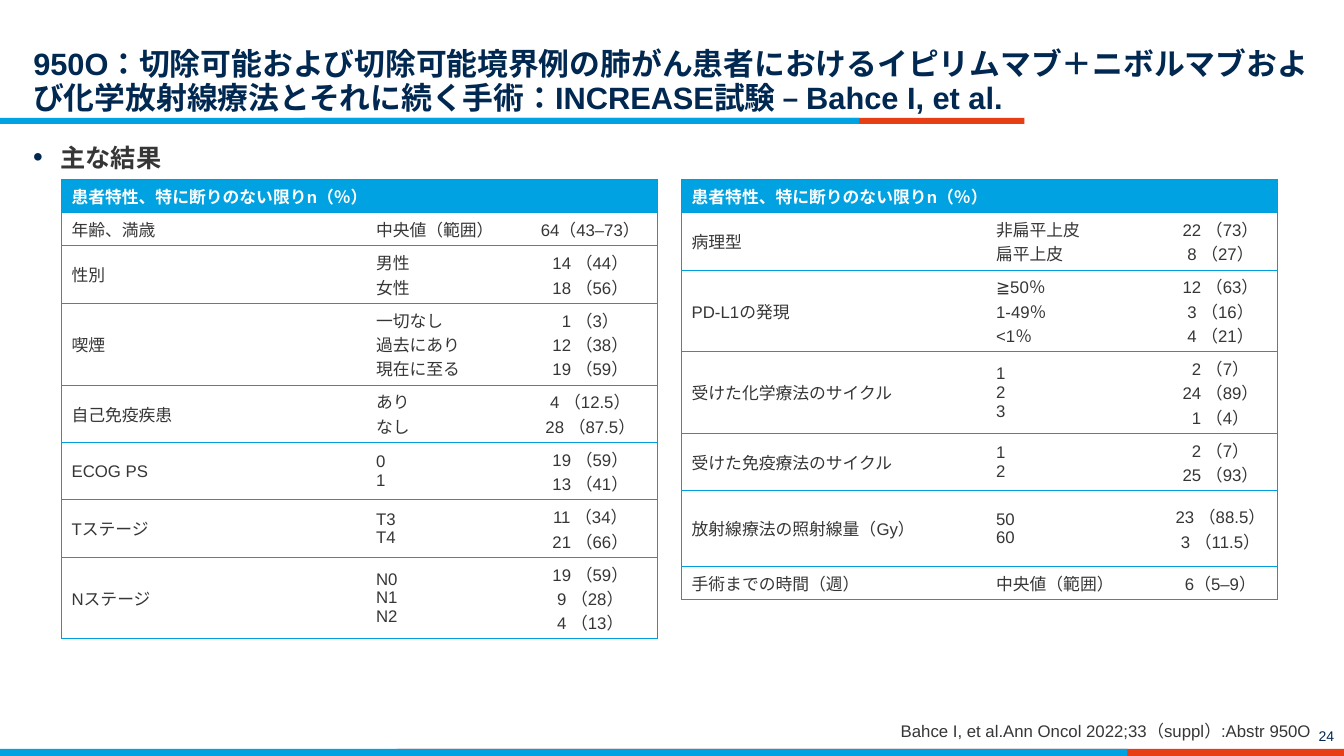
import lxml.etree
import pptx
import pptx.dml.color
import pptx.enum.lang
import pptx.enum.shapes
import pptx.enum.text
import pptx.oxml.ns
import pptx.util
from dataclasses import dataclass

Inches = pptx.util.Inches
Pt = pptx.util.Pt
qn = pptx.oxml.ns.qn
Align = pptx.enum.text.PP_ALIGN
Anchor = pptx.enum.text.MSO_ANCHOR

TITLE = "950O：切除可能および切除可能境界例の肺がん患者におけるイピリムマブ＋ニボルマブおよび化学放射線療法とそれに続く手術：INCREASE試験 – Bahce I, et al."
HEADING = "主な結果"
CITATION = "Bahce I, et al.Ann Oncol 2022;33（suppl）:Abstr 950O"
PAGE_NUMBER = "24"
TABLE_HEADER = "患者特性、特に断りのない限りn（％）"

TABLES = [
    {
        "left": 0.61,
        "columns": [3.02, 1.56, 1.33],
        "rows": [
            ("年齢、満歳", ["中央値（範囲）"], ["64（43–73）"]),
            ("性別", ["男性", "女性"], ["14 （44）", "18 （56）"]),
            ("喫煙", ["一切なし", "過去にあり", "現在に至る"], ["1 （3）", "12 （38）", "19 （59）"]),
            ("自己免疫疾患", ["あり", "なし"], ["4 （12.5）", "28 （87.5）"]),
            ("ECOG PS", ["0", "1"], ["19 （59）", "13 （41）"]),
            ("Tステージ", ["T3", "T4"], ["11 （34）", "21 （66）"]),
            ("Nステージ", ["N0", "N1", "N2"], ["19 （59）", "9 （28）", "4 （13）"]),
        ],
    },
    {
        "left": 6.76,
        "columns": [3.02, 1.76, 1.13],
        "rows": [
            ("病理型", ["非扁平上皮", "扁平上皮"], ["22 （73）", "8 （27）"]),
            ("PD-L1の発現", ["≧50％", "1-49％", "<1％"], ["12 （63）", "3 （16）", "4 （21）"]),
            ("受けた化学療法のサイクル", ["1", "2", "3"], ["2 （7）", "24 （89）", "1 （4）"]),
            ("受けた免疫療法のサイクル", ["1", "2"], ["2 （7）", "25 （93）"]),
            ("放射線療法の照射線量（Gy）", ["50", "60"], ["23 （88.5）", "3 （11.5）"]),
            ("手術までの時間（週）", ["中央値（範囲）"], ["6（5–9）"]),
        ],
    },
]


@dataclass(frozen=True)
class Theme:
    font: str = "Arial"
    navy: str = "002850"
    text: str = "363636"
    blue: str = "00A2E1"
    red: str = "E73E16"
    border: str = "009EDC"
    white: str = "FFFFFF"
    title_size: int = 22
    heading_size: int = 18
    body_size: int = 12
    page_size: int = 10


THEME = Theme()
TABLE_TOP = 1.78
LINE_HEIGHT = 0.24
ROW_PADDING = 0.09
BARS = [
    (3.94, 7.43, 9.39, 0.07, THEME.red),
    (0, 7.43, 11.18, 0.07, THEME.blue),
    (3.01, 1.17, 7.15, 0.06, THEME.red),
    (0, 1.17, 8.52, 0.06, THEME.blue),
]


def rgb(value):
    return pptx.dml.color.RGBColor.from_string(value)


def write_text(text_frame, text, size, color, bold=False, align=Align.LEFT):
    text_frame.text = text
    for paragraph in text_frame.paragraphs:
        paragraph.alignment = align
        for run in paragraph.runs:
            run.font.name = THEME.font
            run.font.size = Pt(size)
            run.font.bold = bold
            run.font.color.rgb = rgb(color)
            run.font.language_id = pptx.enum.lang.MSO_LANGUAGE_ID.JAPANESE
        if not paragraph.runs:
            lxml.etree.SubElement(paragraph._p, qn("a:endParaRPr"), sz=str(size * 100))


def set_frame(text_frame, anchor, margins):
    text_frame.word_wrap = True
    text_frame.auto_size = pptx.enum.text.MSO_AUTO_SIZE.NONE
    text_frame.vertical_anchor = anchor
    (text_frame.margin_left, text_frame.margin_top,
     text_frame.margin_right, text_frame.margin_bottom) = map(Inches, margins)


def add_text(slide, box, anchor, margins, *text_style, **options):
    text_frame = slide.shapes.add_textbox(*map(Inches, box)).text_frame
    set_frame(text_frame, anchor, margins)
    write_text(text_frame, *text_style, **options)
    return text_frame.paragraphs[0]


def add_bullet(paragraph):
    properties = paragraph._p.get_or_add_pPr()
    properties.set("marL", str(Inches(0.27)))
    properties.set("indent", str(Inches(-0.27)))
    color = lxml.etree.SubElement(properties, qn("a:buClr"))
    lxml.etree.SubElement(color, qn("a:srgbClr"), val=THEME.navy)
    lxml.etree.SubElement(properties, qn("a:buSzPct"), val="110000")
    lxml.etree.SubElement(properties, qn("a:buFont"), typeface=THEME.font)
    lxml.etree.SubElement(properties, qn("a:buChar"), char="•")


def set_borders(cell, visible_sides):
    properties = cell._tc.get_or_add_tcPr()
    for side in "LRTB":
        line = lxml.etree.SubElement(properties, qn(f"a:ln{side}"), w=str(Pt(0.75)))
        if side in visible_sides:
            fill = lxml.etree.SubElement(line, qn("a:solidFill"))
            lxml.etree.SubElement(fill, qn("a:srgbClr"), val=THEME.border)
        else:
            lxml.etree.SubElement(line, qn("a:noFill"))


def add_patient_table(slide, left, columns, rows):
    line_counts = [1] + [len(values) for _, _, values in rows]
    heights = [ROW_PADDING + LINE_HEIGHT * count for count in line_counts]
    contents = [(TABLE_HEADER, "", "")]
    contents += [(label, "\n".join(groups), "\n".join(values)) for label, groups, values in rows]
    box = (left, TABLE_TOP, sum(columns), sum(heights))
    table = slide.shapes.add_table(len(contents), len(columns), *map(Inches, box)).table
    for column, width in zip(table.columns, columns):
        column.width = Inches(width)
    for row, height in zip(table.rows, heights):
        row.height = Inches(height)
    for row_index, texts in enumerate(contents):
        header = row_index == 0
        for column_index, text in enumerate(texts):
            cell = table.cell(row_index, column_index)
            cell.vertical_anchor = Anchor.MIDDLE
            cell.margin_left = cell.margin_right = Inches(0.1)
            cell.margin_top = cell.margin_bottom = Inches(0.04)
            set_borders(cell, "TB" + {0: "L", 2: "R"}.get(column_index, ""))
            cell.fill.solid()
            cell.fill.fore_color.rgb = rgb(THEME.blue if header else THEME.white)
            write_text(cell.text_frame, text, THEME.body_size,
                       THEME.white if header else THEME.text, bold=header,
                       align=Align.CENTER if column_index == 2 else Align.LEFT)
    table.cell(0, 0).merge(table.cell(0, 1))


def add_bar(slide, left, top, width, height, color):
    bar = slide.shapes.add_shape(pptx.enum.shapes.MSO_SHAPE.RECTANGLE,
                                 *map(Inches, (left, top, width, height)))
    bar.shadow.inherit = False
    bar.fill.solid()
    bar.fill.fore_color.rgb = rgb(color)
    bar.line.fill.background()


def main():
    presentation = pptx.Presentation()
    presentation.slide_width = Inches(13.33)
    presentation.slide_height = Inches(7.5)
    slide = presentation.slides.add_slide(presentation.slide_layouts[5])

    for bar in BARS:
        add_bar(slide, *bar)

    title = slide.shapes.title
    title.left, title.top, title.width, title.height = map(Inches, (0.33, 0.12, 12.67, 1.03))
    set_frame(title.text_frame, Anchor.BOTTOM, (0, 0.05, 0, 0))
    write_text(title.text_frame, TITLE, THEME.title_size, THEME.navy, bold=True)
    title.text_frame.paragraphs[0].line_spacing = 0.9

    heading = add_text(slide, (0.33, 1.36, 12.67, 0.42), Anchor.TOP, (0, 0.05, 0, 0.05),
                       HEADING, THEME.heading_size, THEME.text, bold=True)
    heading.space_after = Pt(6)
    add_bullet(heading)

    for table in TABLES:
        add_patient_table(slide, **table)

    citation = add_text(slide, (6.98, 7.13, 6.02, 0.22), Anchor.BOTTOM, (0, 0, 0, 0),
                        CITATION, THEME.body_size, THEME.text, align=Align.RIGHT)
    citation.space_before = Pt(6)
    add_text(slide, (12.68, 7.03, 0.65, 0.4), Anchor.BOTTOM, (0.1, 0.05, 0.1, 0.05),
             PAGE_NUMBER, THEME.page_size, THEME.navy, align=Align.RIGHT)
    presentation.save("out.pptx")


if __name__ == "__main__":
    main()
